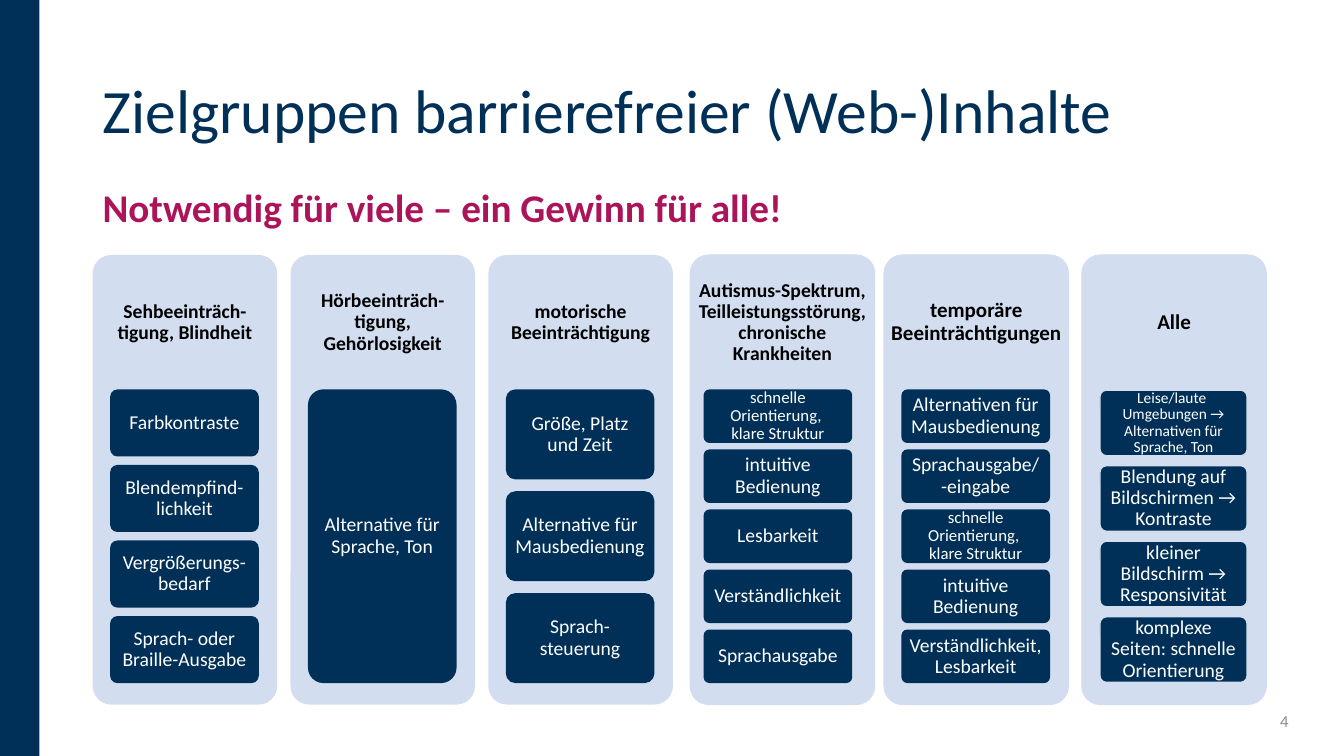
import dataclasses

import pptx
import pptx.dml.color
import pptx.enum.shapes
import pptx.enum.text
import pptx.oxml.ns
import pptx.shapes.autoshape
import pptx.slide
import pptx.text.text
import pptx.util

Inches = pptx.util.Inches
ALIGN = pptx.enum.text.PP_ALIGN
ANCHOR = pptx.enum.text.MSO_ANCHOR


@dataclasses.dataclass(frozen=True)
class Theme:
    font: str = "Calibri"
    navy: str = "003057"
    magenta: str = "AC145A"
    card: str = "D2DEEF"
    black: str = "000000"
    white: str = "FFFFFF"
    grey: str = "8C8C8C"
    title_size: int = 44
    subtitle_size: int = 28
    large_header_size: int = 15
    body_size: int = 14
    small_size: int = 12
    tiny_size: int = 11


THEME = Theme()


@dataclasses.dataclass(frozen=True)
class Box:
    left: float
    top: float
    width: float
    height: float

    def lengths(self) -> tuple[int, int, int, int]:
        return Inches(self.left), Inches(self.top), Inches(self.width), Inches(self.height)


@dataclasses.dataclass(frozen=True)
class TextStyle:
    size: int
    color: str
    bold: bool = False
    align: ALIGN = ALIGN.CENTER
    anchor: ANCHOR = ANCHOR.MIDDLE
    margin_x: float = 0.1
    margin_y: float = 0.05
    line_spacing: float = 0.9


@dataclasses.dataclass(frozen=True)
class Need:
    text: str
    size: int = THEME.body_size


@dataclasses.dataclass(frozen=True)
class TargetGroup:
    header: str
    needs: list[Need]
    header_size: int = THEME.body_size
    card_shift: float = 0
    card_line: str | None = THEME.card
    need_line: str = THEME.navy


FIRST_LEFT, LAST_LEFT = 0.92, 10.73
CARD_TOP, CARD_WIDTH, CARD_HEIGHT = 2.53, 1.83, 4.46
HEADER_HEIGHT = 1.34
NEED_INDENT, NEED_WIDTH, NEEDS_HEIGHT = 0.18, 1.46, 2.9
GAP_RATIO = 0.15  # gap between needs, relative to the height of one need

CLEAR_STRUCTURE = Need("schnelle Orientierung, \nklare Struktur", THEME.small_size)

TARGET_GROUPS = [
    TargetGroup("Sehbeeinträch-tigung, Blindheit", [
        Need("Farbkontraste"),
        Need("Blendempfind-\nlichkeit"),
        Need("Vergrößerungs-bedarf"),
        Need("Sprach- oder Braille-Ausgabe"),
    ], card_line=None),
    TargetGroup("Hörbeeinträch-tigung, Gehörlosigkeit", [
        Need("Alternative für Sprache, Ton"),
    ], card_line=None),
    TargetGroup("motorische Beeinträchtigung", [
        Need("Größe, Platz\nund Zeit"),
        Need("Alternative für Mausbedienung"),
        Need("Sprach-steuerung"),
    ], card_line=None),
    TargetGroup("Autismus-Spektrum, Teilleistungsstörung, chronische Krankheiten", [
        CLEAR_STRUCTURE,
        Need("intuitive Bedienung"),
        Need("Lesbarkeit"),
        Need("Verständlichkeit"),
        Need("Sprachausgabe"),
    ], card_shift=0.04),
    TargetGroup("temporäre Beeinträchtigungen", [
        Need("Alternativen für Mausbedienung"),
        Need("Sprachausgabe/\n-eingabe"),
        CLEAR_STRUCTURE,
        Need("intuitive Bedienung"),
        Need("Verständlichkeit, Lesbarkeit"),
    ], header_size=THEME.large_header_size),
    TargetGroup("Alle", [
        Need("Leise/laute \nUmgebungen → Alternativen für Sprache, Ton", THEME.tiny_size),
        Need("Blendung auf Bildschirmen → Kontraste"),
        Need("kleiner Bildschirm → Responsivität"),
        Need("komplexe Seiten: schnelle Orientierung"),
    ], header_size=THEME.large_header_size, need_line=THEME.card),
]


def rgb(color: str) -> pptx.dml.color.RGBColor:
    return pptx.dml.color.RGBColor.from_string(color)


def write_text(text_frame: pptx.text.text.TextFrame, text: str, style: TextStyle) -> None:
    text_frame.word_wrap = True
    text_frame.vertical_anchor = style.anchor
    text_frame.margin_left = text_frame.margin_right = Inches(style.margin_x)
    text_frame.margin_top = text_frame.margin_bottom = Inches(style.margin_y)
    paragraph = text_frame.paragraphs[0]
    paragraph.text = text
    paragraph.alignment = style.align
    paragraph.line_spacing = style.line_spacing
    for run in paragraph.runs:
        run.font.name = THEME.font
        run.font.size = pptx.util.Pt(style.size)
        run.font.bold = style.bold
        run.font.color.rgb = rgb(style.color)
    for line_break in paragraph._p.findall(pptx.oxml.ns.qn("a:br")):
        properties = line_break.makeelement(pptx.oxml.ns.qn("a:rPr"), {"sz": str(style.size * 100)})
        line_break.append(properties)


def add_text(slide: pptx.slide.Slide, box: Box, text: str, style: TextStyle) -> None:
    write_text(slide.shapes.add_textbox(*box.lengths()).text_frame, text, style)


def add_panel(slide: pptx.slide.Slide, box: Box, fill: str, line: str | None = None,
              line_width: float = 1, rounded: bool = True) -> pptx.shapes.autoshape.Shape:
    kinds = pptx.enum.shapes.MSO_SHAPE
    kind = kinds.ROUNDED_RECTANGLE if rounded else kinds.RECTANGLE
    shape = slide.shapes.add_shape(kind, *box.lengths())
    shape.shadow.inherit = False
    if rounded:
        shape.adjustments[0] = 0.1
    shape.fill.solid()
    shape.fill.fore_color.rgb = rgb(fill)
    if line is None:
        shape.line.fill.background()
    else:
        shape.line.color.rgb = rgb(line)
        shape.line.width = pptx.util.Pt(line_width)
    return shape


def add_target_group(slide: pptx.slide.Slide, left: float, group: TargetGroup) -> None:
    card_left = left + group.card_shift
    add_panel(slide, Box(card_left, CARD_TOP, CARD_WIDTH, CARD_HEIGHT),
              THEME.card, group.card_line, line_width=0.75)
    add_text(slide, Box(card_left, CARD_TOP, CARD_WIDTH, HEADER_HEIGHT), group.header,
             TextStyle(group.header_size, THEME.black, bold=True, margin_x=0.06, margin_y=0.06))

    count = len(group.needs)
    height = NEEDS_HEIGHT / (count + GAP_RATIO * (count - 1))
    for index, need in enumerate(group.needs):
        top = CARD_TOP + HEADER_HEIGHT + index * height * (1 + GAP_RATIO)
        shape = add_panel(slide, Box(left + NEED_INDENT, top, NEED_WIDTH, height),
                          THEME.navy, group.need_line)
        write_text(shape.text_frame, need.text,
                   TextStyle(need.size, THEME.white, margin_x=0.04, margin_y=0.03))


def main() -> None:
    presentation = pptx.Presentation()
    presentation.slide_width, presentation.slide_height = Inches(13.33), Inches(7.5)
    slide = presentation.slides.add_slide(presentation.slide_layouts[6])

    add_panel(slide, Box(0, 0, 0.39, 7.5), THEME.navy, rounded=False)
    add_text(slide, Box(0.92, 0.4, 11.97, 1.45), "Zielgruppen barrierefreier (Web-)Inhalte",
             TextStyle(THEME.title_size, THEME.navy, align=ALIGN.LEFT))
    add_text(slide, Box(0.92, 1.82, 11.97, 0.56), "Notwendig für viele – ein Gewinn für alle!",
             TextStyle(THEME.subtitle_size, THEME.magenta, bold=True,
                       align=ALIGN.LEFT, anchor=ANCHOR.TOP))
    pitch = (LAST_LEFT - FIRST_LEFT) / (len(TARGET_GROUPS) - 1)
    for column, group in enumerate(TARGET_GROUPS):
        add_target_group(slide, FIRST_LEFT + column * pitch, group)
    add_text(slide, Box(9.88, 6.95, 3, 0.4), "4",
             TextStyle(THEME.small_size, THEME.grey, align=ALIGN.RIGHT, line_spacing=1.0))
    presentation.save("out.pptx")


if __name__ == "__main__":
    main()
